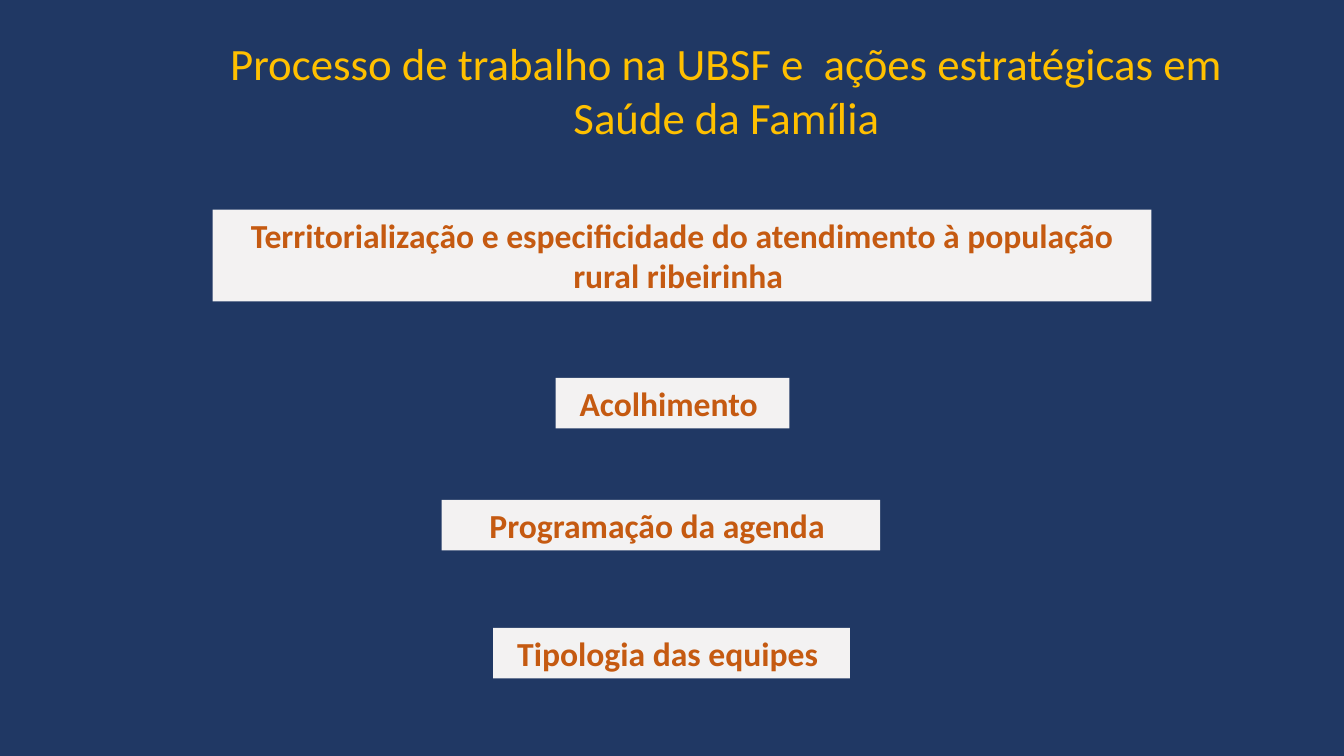
from dataclasses import dataclass

from pptx import Presentation
from pptx.dml.color import RGBColor
from pptx.enum.shapes import MSO_SHAPE
from pptx.enum.text import MSO_ANCHOR, MSO_AUTO_SIZE, PP_ALIGN
from pptx.shapes.autoshape import Shape
from pptx.slide import Slide
from pptx.util import Inches, Pt

NAVY = RGBColor(0x20, 0x38, 0x64)
GOLD = RGBColor(0xFF, 0xC0, 0x00)
PALE_GRAY = RGBColor(0xF3, 0xF2, 0xF2)
RUST = RGBColor(0xC5, 0x5A, 0x11)

FRAME_FORMAT = {
    "word_wrap": True,
    "auto_size": MSO_AUTO_SIZE.SHAPE_TO_FIT_TEXT,
    "vertical_anchor": MSO_ANCHOR.TOP,
}
TITLE_FONT = {"name": "Calibri", "size": Pt(32), "bold": False}
TOPIC_FONT = {"name": "Calibri", "size": Pt(24), "bold": True}


@dataclass(frozen=True)
class Topic:
    text: str
    left: float
    top: float
    width: float
    height: float = 0.5


TITLE = "Processo de trabalho na UBSF e  ações estratégicas em Saúde da Família"
TOPICS = [
    Topic("Territorialização e especificidade do atendimento à população rural ribeirinha ",
          2.11, 2.08, 9.31, 0.91),
    Topic("Acolhimento ", 5.51, 3.75, 2.32),
    Topic("Programação da agenda ", 4.38, 4.96, 4.35),
    Topic("Tipologia das equipes ", 4.89, 6.23, 3.54),
]


def apply_format(target: object, values: dict) -> None:
    for attribute, value in values.items():
        setattr(target, attribute, value)


def write_centred(shape: Shape, text: str, font_format: dict, color: RGBColor) -> None:
    frame = shape.text_frame
    apply_format(frame, FRAME_FORMAT)
    paragraph = frame.paragraphs[0]
    paragraph.alignment = PP_ALIGN.CENTER
    run = paragraph.add_run()
    run.text = text
    apply_format(run.font, font_format)
    run.font.color.rgb = color


def add_title(slide: Slide) -> None:
    title = slide.shapes.add_textbox(Inches(2.01), Inches(0.31), Inches(10.39), Inches(1.18))
    write_centred(title, TITLE, TITLE_FONT, GOLD)


def add_topic(slide: Slide, topic: Topic) -> None:
    panel = slide.shapes.add_shape(
        MSO_SHAPE.RECTANGLE,
        Inches(topic.left), Inches(topic.top), Inches(topic.width), Inches(topic.height),
    )
    panel.shadow.inherit = False
    panel.fill.solid()
    panel.fill.fore_color.rgb = PALE_GRAY
    panel.line.fill.background()
    write_centred(panel, topic.text, TOPIC_FONT, RUST)


def main() -> None:
    presentation = Presentation()
    presentation.slide_width = Inches(13.33)
    presentation.slide_height = Inches(7.5)
    slide = presentation.slides.add_slide(presentation.slide_layouts[6])
    slide.background.fill.solid()
    slide.background.fill.fore_color.rgb = NAVY
    add_title(slide)
    for topic in TOPICS:
        add_topic(slide, topic)
    presentation.save("out.pptx")


if __name__ == "__main__":
    main()
